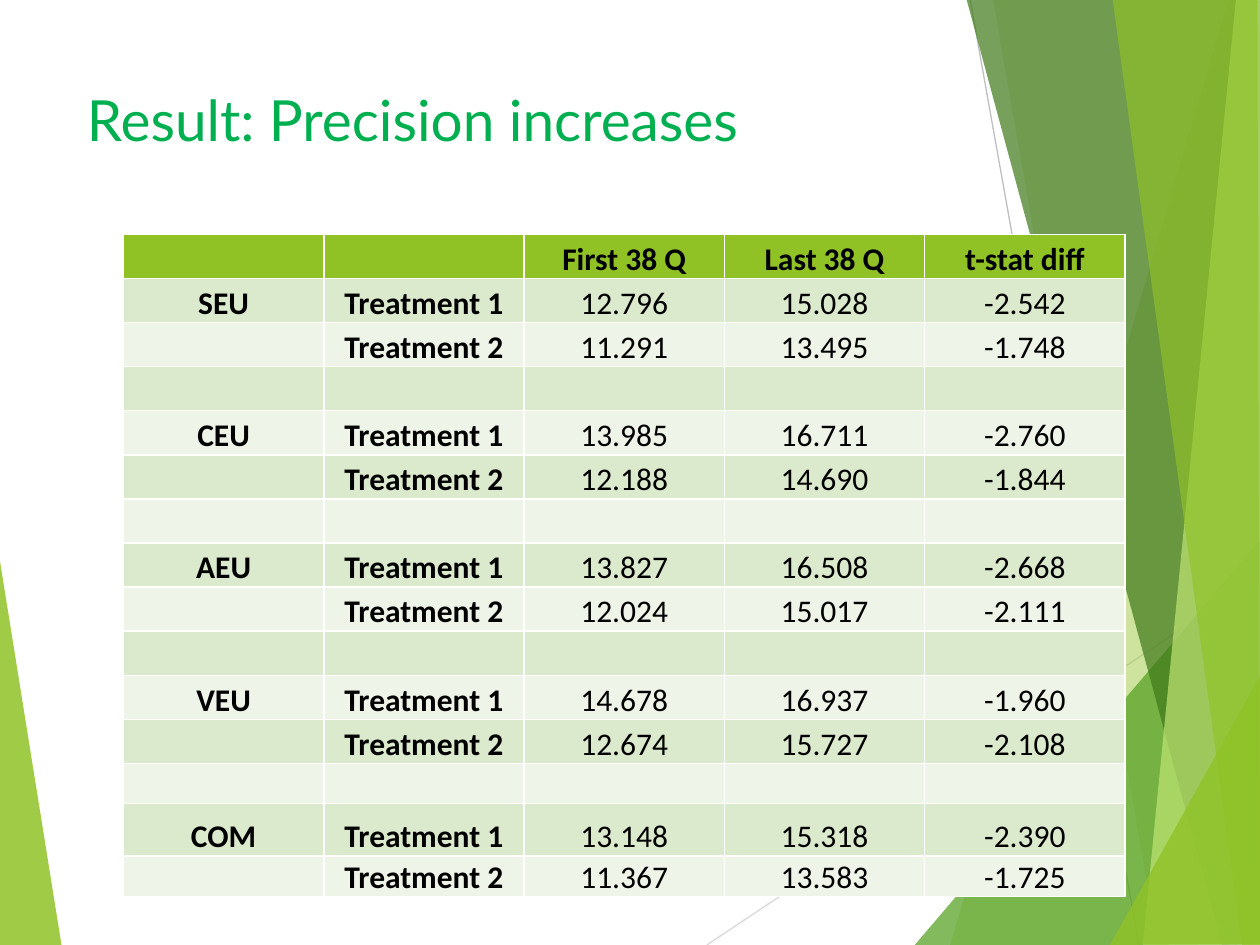
from lxml import etree
from pptx import Presentation, util as u
from pptx.dml.color import RGBColor
from pptx.enum import shapes, text
from pptx.oxml import ns

# Backdrop facets: fill colour, opacity in percent, corner points in inches
FACETS = [
    ("90C226", 85, [(-0.01, 4.39), (0.49, 7.51), (-0.01, 7.5)]),
    ("90C226", 30, [(9.75, 0), (7.54, 7.5), (10.02, 7.51), (10.01, 0.01)]),
    ("90C226", 20, [(7.88, -0.01), (9.19, 7.5), (10.01, 7.5), (10.01, -0.01)]),
    ("54A021", 72, [(7.26, 7.5), (10, 4.29), (10.01, 7.5)]),
    ("3F7819", 70, [(7.67, -0.01), (9.7, 7.5), (10.01, 7.49), (10.01, -0.01)]),
    ("C0E474", 70, [(9.81, -0.01), (9.07, 7.5), (10.01, 7.5), (10, -0.01)]),
    ("90C226", 65, [(8.83, -0.01), (9.86, 7.5), (10, 7.5), (9.98, -0.01)]),
    ("90C226", 80, [(8.81, 7.5), (10.01, 5.35), (10.01, 7.49)]),
]
RAYS = [("D9D9D9", (5.61, 7.5), (10.01, 4.57)), ("BFBFBF", (7.7, 0), (9.04, 7.5))]

HEADER = ["", "", "First 38 Q", "Last 38 Q", "t-stat diff"]
# Each model has one row of values per treatment
RESULTS = {
    "SEU": [("12.796", "15.028", "-2.542"), ("11.291", "13.495", "-1.748")],
    "CEU": [("13.985", "16.711", "-2.760"), ("12.188", "14.690", "-1.844")],
    "AEU": [("13.827", "16.508", "-2.668"), ("12.024", "15.017", "-2.111")],
    "VEU": [("14.678", "16.937", "-1.960"), ("12.674", "15.727", "-2.108")],
    "COM": [("13.148", "15.318", "-2.390"), ("11.367", "13.583", "-1.725")],
}
ROW_HEIGHTS = [0.35] * 12 + [0.31, 0.42, 0.32]
COLUMN_WIDTH = 1.59
HEADER_FILL, BAND_FILLS = "90C226", ("EEF4E8", "DBE9CD")


def color(value):
    return RGBColor.from_string(value)


def paint(fill, value):
    fill.solid()
    fill.fore_color.rgb = color(value)


def add_facet(slide, fill, opacity, points):
    corners = [(u.Inches(x), u.Inches(y)) for x, y in points]
    builder = slide.shapes.build_freeform(*corners[0])
    builder.add_line_segments(corners[1:], close=True)
    shape = builder.convert_to_shape()
    shape.shadow.inherit = False
    shape.line.fill.background()
    paint(shape.fill, fill)
    tone = shape.fill._xPr.find(".//" + ns.qn("a:srgbClr"))
    etree.SubElement(tone, ns.qn("a:alpha"), val=str(opacity * 1000))


def add_ray(slide, line_color, start, end):
    ends = [u.Inches(value) for value in start + end]
    line = slide.shapes.add_connector(shapes.MSO_CONNECTOR.STRAIGHT, *ends)
    line.line.color.rgb = color(line_color)
    line.line.width = u.Pt(0.75)
    etree.SubElement(line._element.spPr, ns.qn("a:effectLst"))


def table_rows():
    rows = [HEADER]
    for model, (first, second) in RESULTS.items():
        if len(rows) > 1:
            rows.append([""] * len(HEADER))  # spacer between models
        rows.append([model, "Treatment 1", *first])
        rows.append(["", "Treatment 2", *second])
    return rows


def fill_cell(cell, content, fill, bold):
    paint(cell.fill, fill)
    cell.margin_left = cell.margin_right = cell.margin_top = u.Inches(0.01)
    cell.margin_bottom = 0
    cell.vertical_anchor = text.MSO_ANCHOR.BOTTOM
    cell.text = content
    paragraph = cell.text_frame.paragraphs[0]
    paragraph.alignment = text.PP_ALIGN.CENTER
    font = paragraph.font
    font.name, font.size, font.bold = "Calibri", u.Pt(18), bold
    font.color.rgb = color("000000")


def add_results_table(slide):
    rows = table_rows()
    table = slide.shapes.add_table(
        len(rows), len(HEADER), u.Inches(0.98), u.Inches(1.86),
        u.Inches(COLUMN_WIDTH * len(HEADER)), u.Inches(sum(ROW_HEIGHTS))).table
    for column in table.columns:
        column.width = u.Inches(COLUMN_WIDTH)
    for r, (row, height) in enumerate(zip(rows, ROW_HEIGHTS)):
        table.rows[r].height = u.Inches(height)
        fill = BAND_FILLS[r % 2] if r else HEADER_FILL
        for c, content in enumerate(row):
            fill_cell(table.cell(r, c), content, fill, bold=r == 0 or c < 2)


def set_title(slide, content):
    title = slide.shapes.title
    title.left, title.top = u.Inches(0.59), u.Inches(0.6)
    title.width, title.height = u.Inches(8.99), u.Inches(0.69)
    frame = title.text_frame
    frame.text = content
    frame.auto_size = text.MSO_AUTO_SIZE.NONE
    frame.vertical_anchor = text.MSO_ANCHOR.MIDDLE
    paragraph = frame.paragraphs[0]
    paragraph.alignment = text.PP_ALIGN.LEFT
    font = paragraph.font
    font.name, font.size = "Lato", u.Pt(32.4)
    font.color.rgb = color("00B050")


def main():
    presentation = Presentation()
    presentation.slide_width = u.Inches(10)
    presentation.slide_height = u.Inches(7.5)
    slide = presentation.slides.add_slide(presentation.slide_layouts[5])

    # Backdrop: the left facet, the thin rays, then the right facets
    add_facet(slide, *FACETS[0])
    for ray in RAYS:
        add_ray(slide, *ray)
    for facet in FACETS[1:]:
        add_facet(slide, *facet)

    # Content
    add_results_table(slide)
    set_title(slide, "Result: Precision increases")
    presentation.save("out.pptx")


if __name__ == "__main__":
    main()
